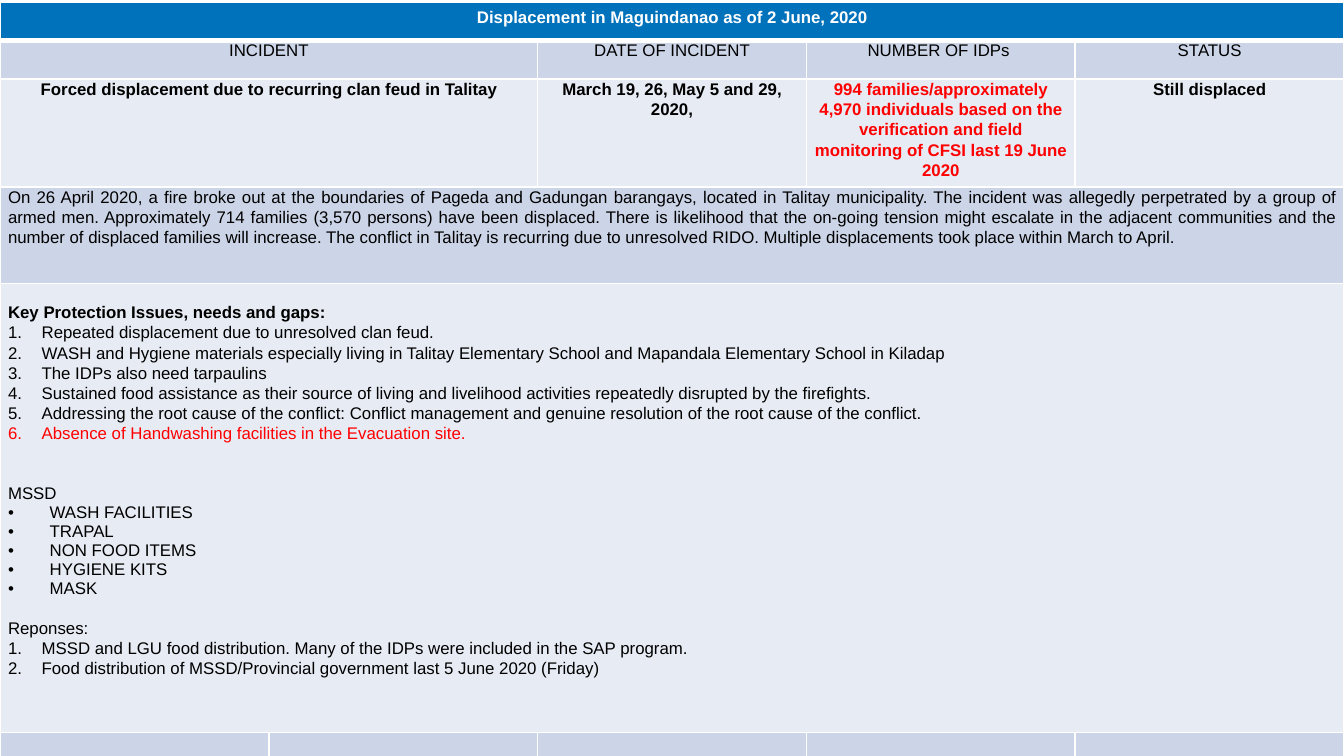
from lxml.etree import SubElement
from pptx import Presentation
from pptx.dml.color import RGBColor
from pptx.enum.text import PP_ALIGN as Align
from pptx.oxml.ns import qn
from pptx.util import Inches, Pt

BLUE = RGBColor(0x00, 0x72, 0xBC)
BAND = RGBColor(0xCC, 0xD5, 0xE7)
PALE = RGBColor(0xE7, 0xEB, 0xF3)
WHITE = RGBColor(0xFF, 0xFF, 0xFF)
BLACK = RGBColor(0x00, 0x00, 0x00)
RED = RGBColor(0xFF, 0x00, 0x00)

ROW_HEIGHTS = [0.28, 0.29, 0.8, 0.72, 3.34, 0.18]
ROW_FILLS = [BLUE, BAND, PALE, BAND, PALE, BAND]
COLUMN_COUNT = 5
LINE_SPACING = 1.07
FONT = "Arial"
TEXT_SIZE = Pt(9)
BLANK_LINE = 10.8

NUMBERED = ("buAutoNum", {"type": "arabicPeriod"}, 0.25)
DOTTED = ("buChar", {"char": "•"}, 0.31)

TITLE = "Displacement in Maguindanao as of 2 June, 2020"
HEADINGS = ["INCIDENT", "DATE OF INCIDENT", "NUMBER OF IDPs ", "STATUS"]
INCIDENT = [
    ("Forced displacement due to recurring clan feud in Talitay", BLACK),
    ("March 19, 26, May 5 and 29, 2020,", BLACK),
    ("994 families/approximately 4,970 individuals based on the verification "
     "and field monitoring of CFSI last 19 June 2020", RED),
    ("Still displaced", BLACK),
]
SUMMARY = (
    "On 26 April 2020, a fire broke out at the boundaries of Pageda and Gadungan "
    "barangays, located in Talitay municipality. The incident was allegedly "
    "perpetrated by a group of armed men. Approximately 714 families (3,570 persons) "
    "have been displaced. There is likelihood that the on-going tension might "
    "escalate in the adjacent communities and the number of displaced families will "
    "increase. The conflict in Talitay is recurring due to unresolved RIDO. Multiple "
    "displacements took place within March to April."
)
ISSUES = [
    "Repeated displacement due to unresolved clan feud.",
    "WASH and Hygiene materials especially living in Talitay Elementary School and "
    "Mapandala Elementary School in Kiladap",
    "The IDPs also need tarpaulins",
    "Sustained food assistance as their source of living and livelihood activities "
    "repeatedly disrupted by the firefights.",
    "Addressing the root cause of the conflict: Conflict management and genuine "
    "resolution of the root cause of the conflict.",
]
URGENT_ISSUE = "Absence of Handwashing facilities in the Evacuation site."
NEEDS = ["WASH FACILITIES", "TRAPAL", "NON FOOD ITEMS", "HYGIENE KITS", "MASK"]
RESPONSES = [
    "MSSD and LGU food distribution. Many of the IDPs were included in the SAP program.",
    "Food distribution of MSSD/Provincial government last 5 June 2020 (Friday)",
]


def set_margins(cell, side, top=0, bottom=0):
    """Set the inner margins of a cell in inches."""
    margins = {"margin_left": side, "margin_right": side,
               "margin_top": top, "margin_bottom": bottom}
    for name, value in margins.items():
        setattr(cell, name, Inches(value))


def set_borders(cell, top=1, bottom=1):
    """Draw white borders with the given top and bottom widths in points."""
    properties = cell._tc.get_or_add_tcPr()
    for side, width in {"L": 1, "R": 1, "T": top, "B": bottom}.items():
        line = SubElement(properties, qn(f"a:ln{side}"), w=str(Pt(width)))
        fill = SubElement(line, qn("a:solidFill"))
        SubElement(fill, qn("a:srgbClr"), val=str(WHITE))


def write(cell, text, color=BLACK, bold=False, align=Align.JUSTIFY,
          spacing=LINE_SPACING, before=0, marker=None):
    """Add one formatted paragraph to a cell, using the empty first one if free."""
    frame = cell.text_frame
    para = frame.add_paragraph() if frame.text else frame.paragraphs[0]
    layout = {"alignment": align, "line_spacing": spacing, "space_before": Pt(before)}
    for name, value in layout.items():
        setattr(para, name, value)
    if marker:
        tag, attributes, indent = marker
        properties = para._p.get_or_add_pPr()
        properties.set("marL", str(Inches(indent)))
        properties.set("indent", str(-Inches(indent)))
        SubElement(properties, qn("a:buFont"), typeface=FONT)
        SubElement(properties, qn(f"a:{tag}"), attributes)
    span = para.add_run()
    span.text = text
    for name, value in {"name": FONT, "size": TEXT_SIZE, "bold": bold}.items():
        setattr(span.font, name, value)
    span.font.color.rgb = color


def write_details(cell):
    """Fill the large cell with issues, needs and responses."""
    set_margins(cell, 0.06, top=0.14)
    write(cell, "Key Protection Issues, needs and gaps:", bold=True)
    for issue in ISSUES:
        write(cell, issue, marker=NUMBERED)
    write(cell, URGENT_ISSUE, color=RED, marker=NUMBERED)
    write(cell, "MSSD", before=2 * BLANK_LINE)
    for need in NEEDS:
        write(cell, need, align=Align.LEFT, spacing=1.0, marker=DOTTED)
    write(cell, "Reponses:", before=BLANK_LINE)
    for response in RESPONSES:
        write(cell, response, marker=NUMBERED)


def add_grid(page, left, top, width):
    """Add the empty, filled and bordered table and return it."""
    frame = page.shapes.add_table(
        len(ROW_HEIGHTS), COLUMN_COUNT, Inches(left), Inches(top),
        Inches(width), Inches(sum(ROW_HEIGHTS)))
    table = frame.table
    table.first_row = table.horz_banding = False
    for column in table.columns:
        column.width = Inches(width / COLUMN_COUNT)
    for index, (height, fill) in enumerate(zip(ROW_HEIGHTS, ROW_FILLS)):
        row = table.rows[index]
        row.height = Inches(height)
        for cell in row.cells:
            set_margins(cell, 0.06)
            set_borders(cell, top=3 if index == 1 else 1, bottom=3 if index == 0 else 1)
            cell.fill.solid()
            cell.fill.fore_color.rgb = fill
            end = cell.text_frame.paragraphs[0]._p.get_or_add_endParaRPr()
            end.set("sz", str(int(TEXT_SIZE.pt * 100)))
    for index, last in {0: 4, 1: 1, 2: 1, 3: 4, 4: 4}.items():
        table.cell(index, 0).merge(table.cell(index, last))
    return table


def add_report(page, left, top, width):
    """Place the displacement report table on the page."""
    table = add_grid(page, left, top, width)
    title = table.cell(0, 0)
    set_margins(title, 0.07, top=0.04, bottom=0.04)
    write(title, TITLE, color=WHITE, bold=True, align=Align.CENTER, spacing=1.0)
    for column, heading, (text, color) in zip([0, 2, 3, 4], HEADINGS, INCIDENT):
        write(table.cell(1, column), heading, align=Align.CENTER)
        write(table.cell(2, column), text, color=color, bold=True, align=Align.CENTER)
    write(table.cell(3, 0), SUMMARY)
    write_details(table.cell(4, 0))


def main():
    """Build the one-page deck and save it."""
    deck = Presentation()
    deck.slide_width = Inches(10)
    deck.slide_height = deck.slide_width * 9 // 16
    page = deck.slides.add_slide(deck.slide_layouts[6])
    add_report(page, left=0, top=0.02, width=10)
    deck.save("out.pptx")


if __name__ == "__main__":
    main()
